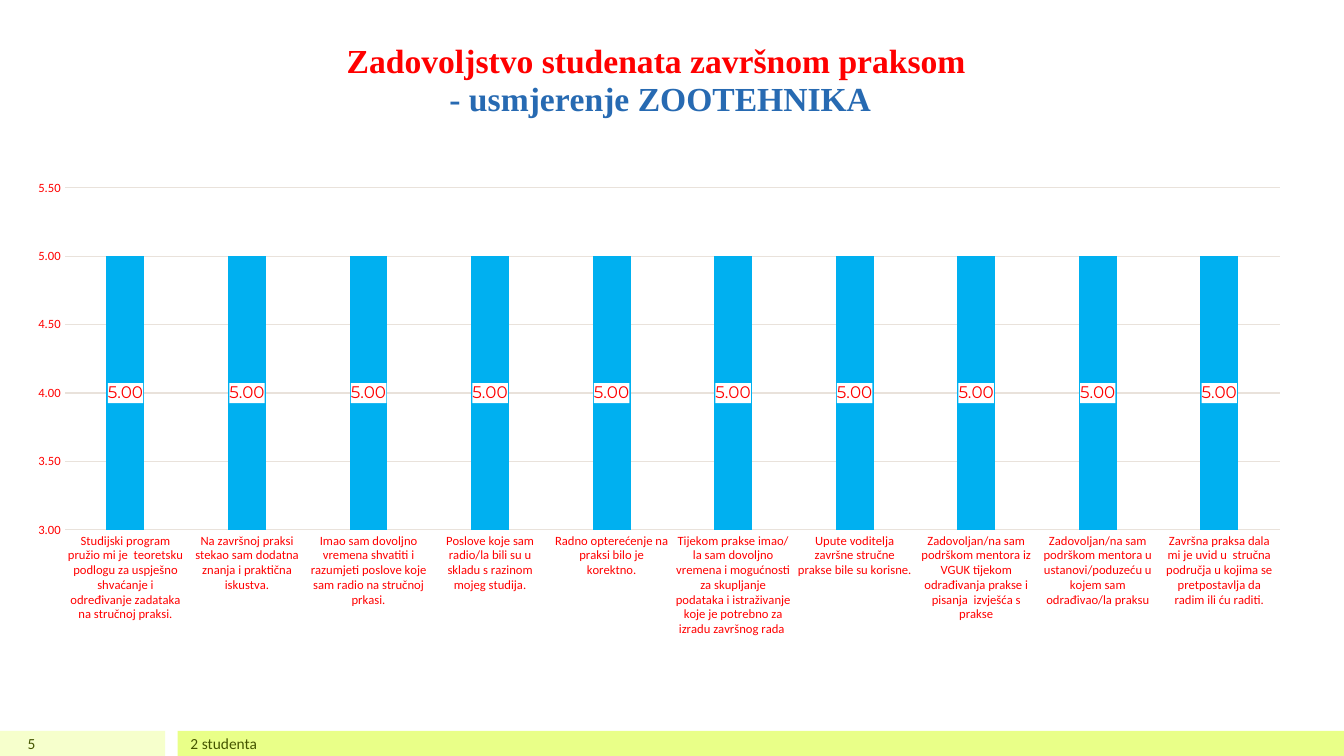
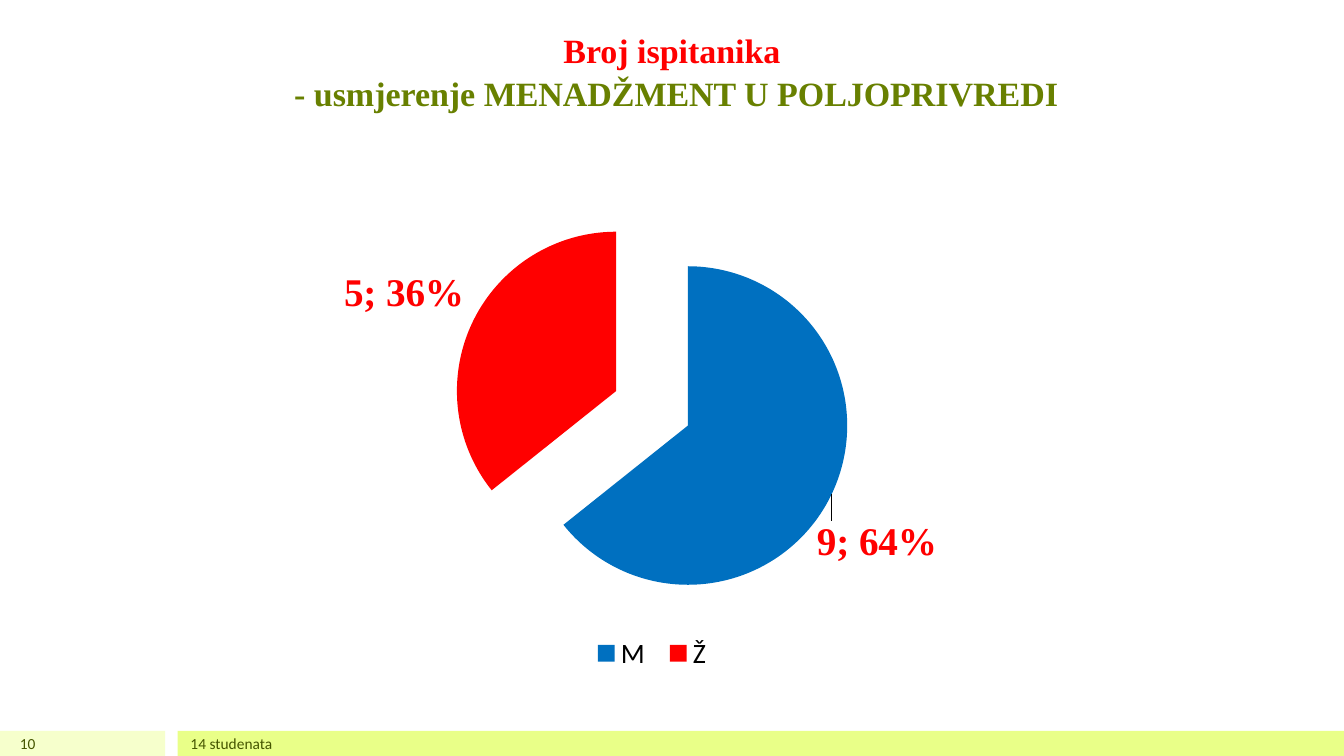
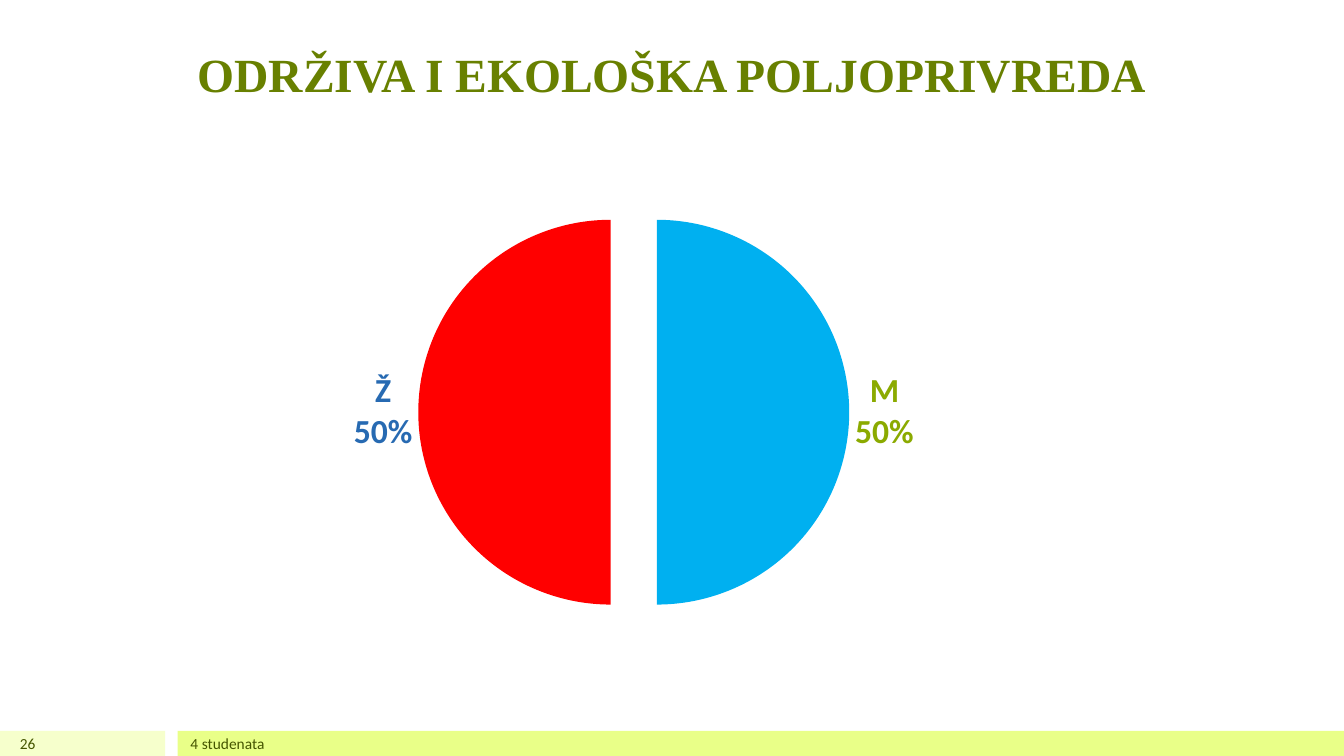
from dataclasses import dataclass
from typing import Optional

import pptx
import pptx.chart.data
import pptx.dml.color
import pptx.enum.chart
import pptx.enum.shapes
import pptx.enum.text
import pptx.oxml
import pptx.oxml.ns
import pptx.util

Pt = pptx.util.Pt
RGBColor = pptx.dml.color.RGBColor
qn = pptx.oxml.ns.qn
XL = pptx.enum.chart
ALIGN = pptx.enum.text.PP_ALIGN
ANCHOR = pptx.enum.text.MSO_ANCHOR

RED = RGBColor(0xFF, 0x00, 0x00)
BLUE = RGBColor(0x00, 0x70, 0xC0)
SKY = RGBColor(0x00, 0xB0, 0xF0)
STEEL = RGBColor(0x27, 0x6A, 0xB2)
OLIVE = RGBColor(0x68, 0x80, 0x00)
LIME = RGBColor(0x8B, 0xAA, 0x00)
DARK_OLIVE = RGBColor(0x45, 0x55, 0x00)
BROWN = RGBColor(0x4D, 0x3E, 0x2F)
GRID = RGBColor(0xE9, 0xE2, 0xDB)
BLACK = RGBColor(0x00, 0x00, 0x00)
PALE_BAND = RGBColor(0xF6, 0xFF, 0xCC)
BRIGHT_BAND = RGBColor(0xE9, 0xFF, 0x88)

SANS = "Calibri"
SERIF = "Times New Roman"
LABEL_SANS = "Montserrat"
WIDTH, HEIGHT, BAND_H = 960, 540, 18
TITLE_ONLY, BLANK = 5, 6


@dataclass(frozen=True)
class Box:
    x: float
    y: float
    w: float
    h: float


@dataclass(frozen=True)
class Line:
    text: str
    color: RGBColor


@dataclass(frozen=True)
class Slice:
    name: str
    value: float
    fill: RGBColor
    label_color: RGBColor
    offset: Optional[tuple[float, float]] = None


@dataclass(frozen=True)
class Pie:
    box: Box
    plot: Box
    slices: list[Slice]
    explosion: int
    label_font: str
    label_size: float
    shows: tuple[str, ...]
    separator: str
    position: XL.XL_LABEL_POSITION
    legend: bool


@dataclass(frozen=True)
class PieSlide:
    number: str
    footer: str
    title: list[Line]
    title_size: float
    title_box: Box
    title_inset: float
    pie: Pie


BANDS = [
    (Box(0, HEIGHT - BAND_H, 118, BAND_H), PALE_BAND),
    (Box(127, HEIGHT - BAND_H, WIDTH - 127, BAND_H), BRIGHT_BAND),
]
NUMBER_BOX = Box(0, HEIGHT - BAND_H, 32.4, BAND_H)
FOOTER_BOX = Box(129, HEIGHT - BAND_H, 720, BAND_H)

SATISFACTION_TITLE = [
    Line("Zadovoljstvo studenata završnom praksom ", RED),
    Line("- usmjerenje ZOOTEHNIKA", STEEL),
]
STATEMENTS = [
    "Studijski program pružio mi je  teoretsku podlogu za uspješno shvaćanje i određivanje zadataka na stručnoj praksi.",
    "Na završnoj praksi stekao sam dodatna znanja i praktična iskustva.",
    "Imao sam dovoljno vremena shvatiti i razumjeti poslove koje sam radio na stručnoj prkasi.",
    "Poslove koje sam radio/la bili su u skladu s razinom mojeg studija.",
    "Radno opterećenje na praksi bilo je korektno.",
    "Tijekom prakse imao/la sam dovoljno vremena i mogućnosti za skupljanje podataka i istraživanje koje je potrebno za izradu završnog rada ",
    "Upute voditelja završne stručne prakse bile su korisne.",
    "Zadovoljan/na sam podrškom mentora iz VGUK tijekom odrađivanja prakse i pisanja  izvješća s prakse",
    "Zadovoljan/na sam podrškom mentora u ustanovi/poduzeću u kojem sam odrađivao/la praksu",
    "Završna praksa dala mi je uvid u  stručna područja u kojima se pretpostavlja da radim ili ću raditi.",
]

PIE_SLIDES = [
    PieSlide(
        "10", "14 studenata",
        [Line("Broj ispitanika", RED),
         Line(" - usmjerenje MENADŽMENT U POLJOPRIVREDI", OLIVE)],
        24.3, Box(111, 26, 738, 93), 38,
        Pie(Box(47.5, 138.2, 836.6, 344.9), Box(0.33, 0.03, 0.34, 0.83),
            [Slice("M ", 9, BLUE, RED, (0.1, 0.17)),
             Slice("Ž", 5, RED, RED, (-0.12, -0.13))],
            25, SERIF, 28, ("showVal", "showPercent"), "; ",
            XL.XL_LABEL_POSITION.CENTER, True),
    ),
    PieSlide(
        "26", "4 studenata",
        [Line("ODRŽIVA I EKOLOŠKA POLJOPRIVREDA", OLIVE)],
        34, Box(111, 21.6, 738, 93), 42,
        Pie(Box(91.4, 115.2, 708.5, 362.2), Box(0.29, 0.07, 0.44, 0.85),
            [Slice("M", 50, SKY, LIME), Slice("Ž", 50, RED, STEEL)],
            12, SANS, 24, ("showCatName", "showPercent"), "\n",
            XL.XL_LABEL_POSITION.OUTSIDE_END, False),
    ),
]


def pts(box: Box) -> tuple[int, int, int, int]:
    return Pt(box.x), Pt(box.y), Pt(box.w), Pt(box.h)


def style(font, name: str, size: float, color: RGBColor, bold: bool = False) -> None:
    font.name, font.size, font.bold = name, Pt(size), bold
    font.color.rgb = color


def write_lines(tf, lines: list[Line], size: float) -> None:
    for i, line in enumerate(lines):
        p = tf.paragraphs[0] if i == 0 else tf.add_paragraph()
        p.add_run().text = line.text
        p.alignment = ALIGN.CENTER
        style(p.font, SERIF, size, line.color, True)


def add_band_text(s, box: Box, text: str, align: ALIGN) -> None:
    tf = s.shapes.add_textbox(*pts(box)).text_frame
    tf.word_wrap = True
    tf.margin_top = tf.margin_bottom = 0
    tf.vertical_anchor = ANCHOR.MIDDLE
    p = tf.paragraphs[0]
    p.text, p.alignment = text, align
    style(p.font, SANS, 11, DARK_OLIVE)


def add_slide(prs, layout: int, number: str, footer: str):
    s = prs.slides.add_slide(prs.slide_layouts[layout])
    for box, color in BANDS:
        sp = s.shapes.add_shape(pptx.enum.shapes.MSO_SHAPE.RECTANGLE, *pts(box))
        sp.shadow.inherit = False
        sp.fill.solid()
        sp.fill.fore_color.rgb = color
        sp.line.fill.background()
    add_band_text(s, NUMBER_BOX, number, ALIGN.RIGHT)
    add_band_text(s, FOOTER_BOX, footer, ALIGN.LEFT)
    return s


def chart_element(tag: str, value: Optional[str] = None):
    element = pptx.oxml.parse_xml(f"<c:{tag} {pptx.oxml.ns.nsdecls('c')}/>")
    if value is not None:
        element.set("val", value)
    return element


def set_layout(parent, index: int, **values) -> None:
    for old in parent.findall(qn("c:layout")):
        parent.remove(old)
    layout, manual = chart_element("layout"), chart_element("manualLayout")
    for tag, value in values.items():
        manual.append(chart_element(tag, str(value)))
    layout.append(manual)
    parent.insert(index, layout)


def set_plot_area(chart, box: Box) -> None:
    area = chart._chartSpace.find(".//" + qn("c:plotArea"))
    set_layout(area, 0, layoutTarget="inner", xMode="edge", yMode="edge",
               x=box.x, y=box.y, w=box.w, h=box.h)


def add_chart(s, kind, box: Box, cats: list[str], values: list[float], plot: Box):
    data = pptx.chart.data.CategoryChartData()
    data.categories = cats
    data.add_series("Series 1", values)
    chart = s.shapes.add_chart(kind, *pts(box), data).chart
    style(chart.font, SANS, 10, BROWN)
    chart.has_legend = False
    set_plot_area(chart, plot)
    return chart


def add_satisfaction_slide(prs) -> None:
    s = add_slide(prs, BLANK, "5", "2 studenta")
    chart = add_chart(s, XL.XL_CHART_TYPE.COLUMN_STACKED, Box(18, 12.2, 910, 500.4),
                      STATEMENTS, [5] * len(STATEMENTS), Box(0.03, 0.24, 0.95, 0.49))
    set_plot_area(chart, Box(0.031, 0.244, 0.954, 0.488))
    write_lines(chart.chart_title.text_frame, SATISFACTION_TITLE, 24)
    set_layout(chart.chart_title._element, 1, xMode="edge", yMode="edge", x=0.25, y=0.03)

    for axis in (chart.category_axis, chart.value_axis):
        axis.major_tick_mark = axis.minor_tick_mark = XL.XL_TICK_MARK.NONE
        axis.format.line.fill.background()
        style(axis.tick_labels.font, SANS, 9, RED)
    axis = chart.value_axis
    axis.minimum_scale, axis.maximum_scale, axis.major_unit = 3, 5.5, 0.5
    axis.tick_labels.number_format = "0.00"
    axis.tick_labels.number_format_is_linked = False
    axis.major_gridlines.format.line.color.rgb = GRID
    axis.major_gridlines.format.line.width = Pt(0.75)

    plot = chart.plots[0]
    plot.gap_width, plot.overlap, plot.vary_by_categories = 220, 100, False
    series = plot.series[0]
    series.format.fill.solid()
    series.format.fill.fore_color.rgb = SKY
    labels = series.data_labels
    labels.show_value = True
    labels.number_format, labels.number_format_is_linked = "0.00", False
    labels.position = XL.XL_LABEL_POSITION.CENTER
    style(labels.font, LABEL_SANS, 12, RED)
    label_fill = pptx.oxml.parse_xml(
        f"<c:spPr {pptx.oxml.ns.nsdecls('c', 'a')}><a:solidFill>"
        '<a:srgbClr val="FFFFFF"/></a:solidFill></c:spPr>')
    labels._element.find(qn("c:numFmt")).addnext(label_fill)


def add_pie(s, pie: Pie) -> None:
    chart = add_chart(s, XL.XL_CHART_TYPE.PIE, pie.box, [c.name for c in pie.slices],
                      [c.value for c in pie.slices], pie.plot)
    chart.has_title = False
    if pie.legend:
        chart.has_legend = True
        chart.legend.position = XL.XL_LEGEND_POSITION.BOTTOM
        chart.legend.include_in_layout = False
        style(chart.legend.font, SANS, 20, BLACK)

    series = chart.plots[0].series[0]
    for i, part in enumerate(pie.slices):
        point = series.points[i]
        point.format.fill.solid()
        point.format.fill.fore_color.rgb = part.fill
        style(point.data_label.font, pie.label_font, pie.label_size, part.label_color, True)
        point.data_label.position = pie.position
    ser = series._element
    ser.find(qn("c:dPt")).addprevious(chart_element("explosion", str(pie.explosion)))
    for part, label in zip(pie.slices, ser.iter(qn("c:dLbl"))):
        for tag in ("showVal", "showCatName", "showPercent"):
            label.find(qn(f"c:{tag}")).set("val", str(int(tag in pie.shows)))
        separator = chart_element("separator")
        separator.text = pie.separator
        label.append(separator)
        if part.offset:
            set_layout(label, 1, x=part.offset[0], y=part.offset[1])


def add_pie_slide(prs, spec: PieSlide) -> None:
    s = add_slide(prs, TITLE_ONLY, spec.number, spec.footer)
    title = s.shapes.title
    title.left, title.top, title.width, title.height = pts(spec.title_box)
    tf = title.text_frame
    tf.auto_size = pptx.enum.text.MSO_AUTO_SIZE.NONE
    tf.vertical_anchor = ANCHOR.BOTTOM
    tf.margin_bottom = Pt(spec.title_inset)
    write_lines(tf, spec.title, spec.title_size)
    for p in tf.paragraphs:
        p.line_spacing = 1.05
    add_pie(s, spec.pie)


def main() -> None:
    prs = pptx.Presentation()
    prs.slide_width, prs.slide_height = Pt(WIDTH), Pt(HEIGHT)
    add_satisfaction_slide(prs)
    for spec in PIE_SLIDES:
        add_pie_slide(prs, spec)
    prs.save("out.pptx")


if __name__ == "__main__":
    main()
